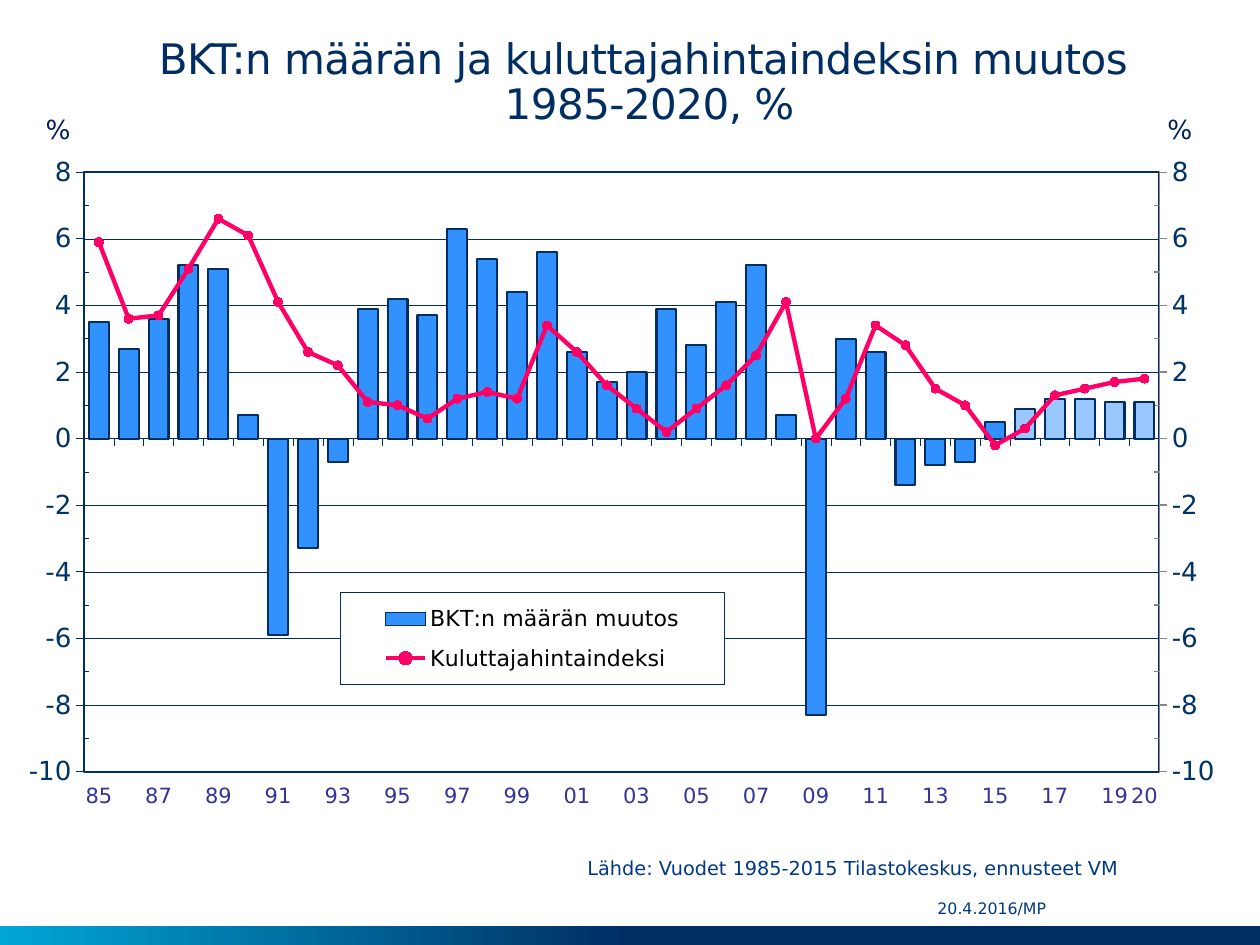
from copy import deepcopy
from dataclasses import dataclass

from lxml import etree
from pptx import Presentation
from pptx.chart.axis import CategoryAxis, ValueAxis
from pptx.chart.data import CategoryChartData
from pptx.dml.color import RGBColor
from pptx.enum.chart import (XL_CHART_TYPE, XL_LEGEND_POSITION, XL_MARKER_STYLE,
                             XL_TICK_LABEL_POSITION, XL_TICK_MARK)
from pptx.enum.dml import MSO_LINE
from pptx.enum.shapes import MSO_SHAPE
from pptx.enum.text import MSO_ANCHOR, PP_ALIGN
from pptx.oxml import parse_xml
from pptx.oxml.ns import qn
from pptx.util import Pt

CENTER, LEFT = PP_ALIGN.CENTER, PP_ALIGN.LEFT
TOP, MIDDLE, BOTTOM = MSO_ANCHOR.TOP, MSO_ANCHOR.MIDDLE, MSO_ANCHOR.BOTTOM
OUTSIDE, INSIDE = XL_TICK_MARK.OUTSIDE, XL_TICK_MARK.INSIDE
LOW, HIGH = XL_TICK_LABEL_POSITION.LOW, XL_TICK_LABEL_POSITION.HIGH


@dataclass(frozen=True)
class Theme:
    font: str = "DejaVu Sans"
    chart_font: str = "Times New Roman"
    navy: str = "002E63"
    cyan: str = "00A6D6"
    note: str = "003882"
    unit: str = "002060"
    years: str = "333399"
    scale: str = "003366"
    grey: str = "868686"
    black: str = "000000"
    bar: str = "3191FF"
    forecast: str = "98C8FF"
    price: str = "FF0066"
    title_size: float = 24
    scale_size: float = 15
    legend_size: float = 12.6
    year_size: float = 12
    source_size: float = 11
    date_size: float = 9
    chart_size: float = 21.6


THEME = Theme()

# Content
TITLE = "BKT:n määrän ja kuluttajahintaindeksin muutos \n1985-2020, %"
SOURCE = "Lähde: Vuodet 1985-2015 Tilastokeskus, ennusteet VM"
DATE = "20.4.2016/MP"
FIRST_YEAR, LAST_YEAR, FIRST_FORECAST = 1985, 2020, 2016
GDP = ("BKT:n määrän muutos",
       [3.5, 2.7, 3.6, 5.2, 5.1, 0.7, -5.9, -3.3, -0.7, 3.9, 4.2, 3.7,
        6.3, 5.4, 4.4, 5.6, 2.6, 1.7, 2, 3.9, 2.8, 4.1, 5.2, 0.7,
        -8.3, 3, 2.6, -1.4, -0.8, -0.7, 0.5, 0.9, 1.2, 1.2, 1.1, 1.1])
PRICES = ("Kuluttajahintaindeksi",
          [5.9, 3.6, 3.7, 5.1, 6.6, 6.1, 4.1, 2.6, 2.2, 1.1, 1, 0.6,
           1.2, 1.4, 1.2, 3.4, 2.6, 1.6, 0.9, 0.2, 0.9, 1.6, 2.5, 4.1,
           0, 1.2, 3.4, 2.8, 1.5, 1, -0.2, 0.3, 1.3, 1.5, 1.7, 1.8])

# Places in points: left, top, width, height
SLIDE_SIZE = (720, 540)
BAND_BOX = (0, 529.2, 720, 10.8)
CHART_BOX = (12.24, 87.12, 681.84, 377.28)
# Text, box, size, colour, alignment, anchor, wrap, vertical inset
TEXTS = [
    (DATE, (535.68, 513.6, 140.4, 10.8), THEME.date_size, THEME.note, LEFT, MIDDLE, True, 0),
    (SOURCE, (328.7, 489.4, 317.52, 13.68), THEME.source_size, THEME.note, CENTER, TOP, False, 0),
]
TEXTS += [("%", (left, 64.8, 16.56, 18), THEME.scale_size, THEME.unit, CENTER, TOP, False, 0)
          for left in (666, 25)]
TITLE_TEXT = (TITLE, (36.72, 20.3, 668.88, 56.88), THEME.title_size, THEME.navy,
              CENTER, BOTTOM, True, 3.6)
# Shares of the chart area
PLOT_LAYOUT = (0.0525, 0.03, 0.904, 0.908)
LEGEND_LAYOUT = (0.268, 0.667, 0.323, 0.139)

CHART_NS = "http://schemas.openxmlformats.org/drawingml/2006/chart"
DRAWING_NS = "http://schemas.openxmlformats.org/drawingml/2006/main"


def color(value):
    return RGBColor.from_string(value)


def set_font(font, size, value, name=THEME.font, bold=False):
    font.size, font.name, font.bold = Pt(size), name, bold
    font.color.rgb = color(value)


def set_line(line, value, width):
    line.color.rgb = color(value)
    line.width = Pt(width)


def add_text(slide, text, box, size, value, alignment, anchor, wrap, inset):
    frame = slide.shapes.add_textbox(*map(Pt, box)).text_frame
    frame.word_wrap, frame.vertical_anchor = wrap, anchor
    frame.margin_left = frame.margin_right = 0
    frame.margin_top = frame.margin_bottom = Pt(inset)
    paragraph = frame.paragraphs[0]
    paragraph.text = text
    paragraph.alignment = alignment
    set_font(paragraph.font, size, value)
    return paragraph


def add_band(slide):
    band = slide.shapes.add_shape(MSO_SHAPE.RECTANGLE, *map(Pt, BAND_BOX))
    band.shadow.inherit = False
    band.line.fill.background()
    band.fill.gradient()
    band.fill.gradient_angle = 180
    stops = ((0.5, THEME.navy), (1, THEME.cyan))
    for stop, (position, value) in zip(band.fill.gradient_stops, stops):
        stop.position = position
        stop.color.rgb = color(value)


def chart_xml(tag, content):
    return parse_xml(f'<c:{tag} xmlns:c="{CHART_NS}" xmlns:a="{DRAWING_NS}">{content}</c:{tag}>')


def layout_xml(box, inner=False):
    target = '<c:layoutTarget val="inner"/>' if inner else ""
    modes = '<c:xMode val="edge"/><c:yMode val="edge"/>'
    sizes = "".join(f'<c:{name} val="{share}"/>' for name, share in zip("xywh", box))
    return chart_xml("layout", f"<c:manualLayout>{target}{modes}{sizes}</c:manualLayout>")


def outline_xml(width, fill):
    return chart_xml("spPr", f'{fill}<a:ln w="{Pt(width)}"><a:solidFill>'
                             f'<a:srgbClr val="{THEME.navy}"/></a:solidFill></a:ln>')


def drop(parent, tag):
    for child in parent.findall(qn(tag)):
        parent.remove(child)


def move_to_right_axis(plot_area):
    """Turn the second bar series into a line; return the left and right value axes."""
    bars = plot_area.find(qn("c:barChart"))
    series = bars.findall(qn("c:ser"))[1]
    drop(series, "c:invertIfNegative")
    line_plot = chart_xml("lineChart", '<c:grouping val="standard"/><c:varyColors val="0"/>'
                          '<c:marker val="1"/><c:axId val="5001"/><c:axId val="5002"/>')
    line_plot.insert(2, series)
    bars.addnext(line_plot)
    left_value = plot_area.find(qn("c:valAx"))
    right_axes = []
    for tag, own, other in (("c:catAx", "5001", "5002"), ("c:valAx", "5002", "5001")):
        axis = deepcopy(plot_area.find(qn(tag)))
        axis.find(qn("c:axId")).set("val", own)
        axis.find(qn("c:crossAx")).set("val", other)
        right_axes.append(axis)
    hidden_category, right_value = right_axes
    left_value.addnext(right_value)
    right_value.addnext(hidden_category)
    CategoryAxis(hidden_category).visible = False
    right_value.find(qn("c:axPos")).set("val", "r")
    drop(right_value, "c:crosses")
    crosses = chart_xml("crosses", "")
    crosses.set("val", "max")
    right_value.find(qn("c:crossAx")).addnext(crosses)
    return ValueAxis(left_value), ValueAxis(right_value)


def format_axes(chart, left_axis, right_axis):
    years = chart.category_axis
    years.tick_label_position = LOW
    years.major_tick_mark = OUTSIDE
    set_font(years.tick_labels.font, THEME.year_size, THEME.years)
    set_line(years.format.line, THEME.navy, 0.3)
    for axis, value, width in ((left_axis, THEME.navy, 0.3), (right_axis, THEME.grey, 0.75)):
        axis.minimum_scale, axis.maximum_scale = -10, 8
        axis.major_unit, axis.minor_unit = 2, 1
        axis.major_tick_mark, axis.minor_tick_mark = OUTSIDE, INSIDE
        axis.tick_labels.number_format = "0"
        axis.tick_labels.number_format_is_linked = False
        set_font(axis.tick_labels.font, THEME.scale_size, THEME.scale)
        set_line(axis.format.line, value, width)
    right_axis.tick_label_position = HIGH
    right_axis.has_major_gridlines = False
    grid = left_axis.major_gridlines.format.line
    set_line(grid, THEME.navy, 0.25)
    grid.dash_style = MSO_LINE.ROUND_DOT
    # Show every year label
    skip = chart_xml("tickLblSkip", "")
    skip.set("val", "1")
    no_levels = years._element.find(qn("c:noMultiLvlLbl"))
    if no_levels is None:
        no_levels = etree.SubElement(years._element, qn("c:noMultiLvlLbl"))
    no_levels.addprevious(skip)


def format_series(chart):
    bar_plot, line_plot = chart.plots
    bar_plot.gap_width, bar_plot.vary_by_categories = 50, False
    bars, prices = bar_plot.series[0], line_plot.series[0]
    bars.invert_if_negative = False
    forecasts = range(FIRST_FORECAST - FIRST_YEAR, len(GDP[1]))
    parts = [(bars.format, THEME.bar)]
    parts += [(bars.points[index].format, THEME.forecast) for index in forecasts]
    for part, value in parts:
        part.fill.solid()
        part.fill.fore_color.rgb = color(value)
        set_line(part.line, THEME.navy, 1.2)
    prices.smooth = False
    set_line(prices.format.line, THEME.price, 2.5)
    marker = prices.marker
    marker.style, marker.size = XL_MARKER_STYLE.CIRCLE, 5
    marker.format.fill.solid()
    marker.format.fill.fore_color.rgb = color(THEME.price)
    set_line(marker.format.line, THEME.price, 0.75)


def format_legend(chart):
    chart.has_legend = True
    legend = chart.legend
    legend.position = XL_LEGEND_POSITION.RIGHT
    legend.include_in_layout = False
    set_font(legend.font, THEME.legend_size, THEME.black)
    element = legend._element
    drop(element, "c:layout")
    element.find(qn("c:legendPos")).addnext(layout_xml(LEGEND_LAYOUT))
    white = '<a:solidFill><a:srgbClr val="FFFFFF"/></a:solidFill>'
    element.find(qn("c:txPr")).addprevious(outline_xml(0.3, white))


def add_chart(slide):
    data = CategoryChartData()
    # Every second year is labelled, and the last one too
    data.categories = [f"{year % 100:02d}" if year % 2 or year == LAST_YEAR else ""
                       for year in range(FIRST_YEAR, LAST_YEAR + 1)]
    for name, values in (GDP, PRICES):
        data.add_series(name, values)
    chart = slide.shapes.add_chart(XL_CHART_TYPE.COLUMN_CLUSTERED, *map(Pt, CHART_BOX), data).chart
    chart.has_title = False
    set_font(chart.font, THEME.chart_size, THEME.navy, THEME.chart_font, True)
    plot_area = chart._chartSpace.chart.plotArea
    format_axes(chart, *move_to_right_axis(plot_area))
    format_series(chart)
    format_legend(chart)
    drop(plot_area, "c:layout")
    plot_area.insert(0, layout_xml(PLOT_LAYOUT, inner=True))
    plot_area.append(outline_xml(1.2, "<a:noFill/>"))


def main():
    presentation = Presentation()
    presentation.slide_width, presentation.slide_height = map(Pt, SLIDE_SIZE)
    slide = presentation.slides.add_slide(presentation.slide_layouts[6])
    add_band(slide)
    title = add_text(slide, *TITLE_TEXT)
    title.line_spacing = 0.9
    for run in title.runs:
        run.font._element.set("spc", "-30")
    add_chart(slide)
    for text in TEXTS:
        add_text(slide, *text)
    presentation.save("out.pptx")


if __name__ == "__main__":
    main()
